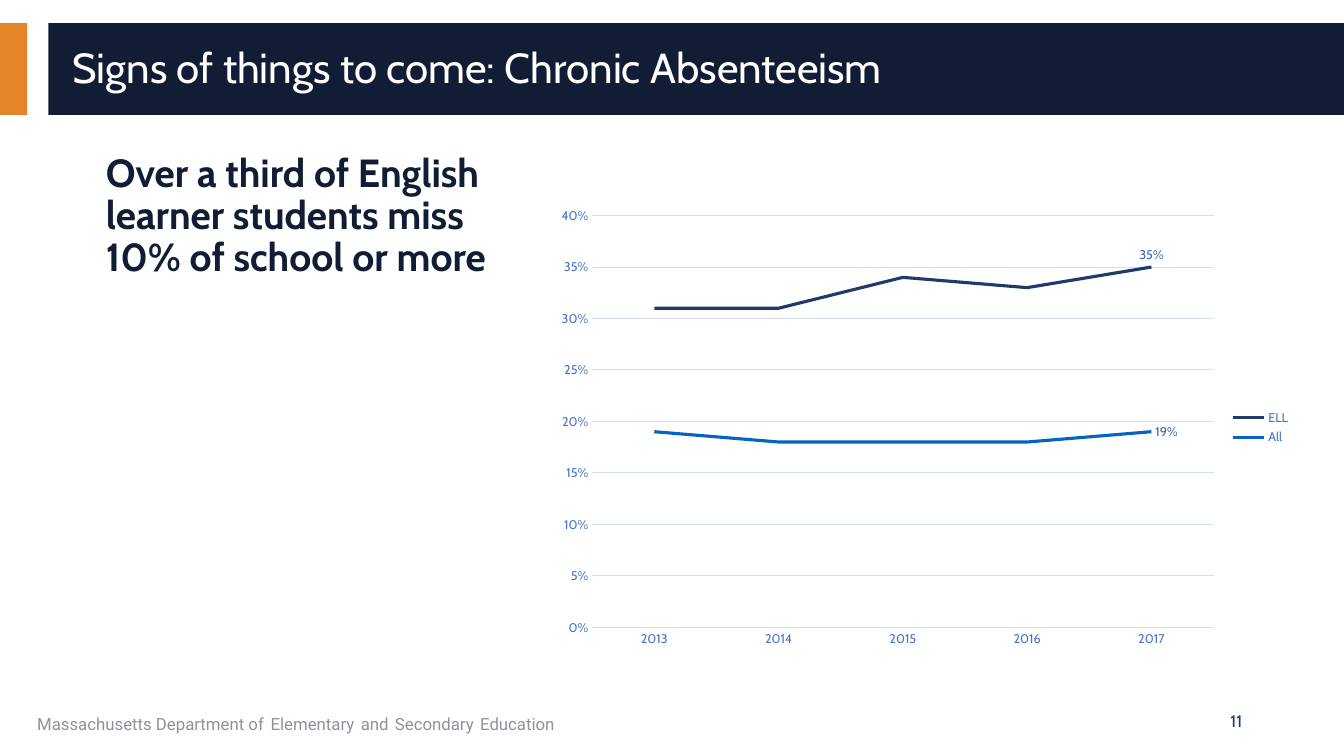
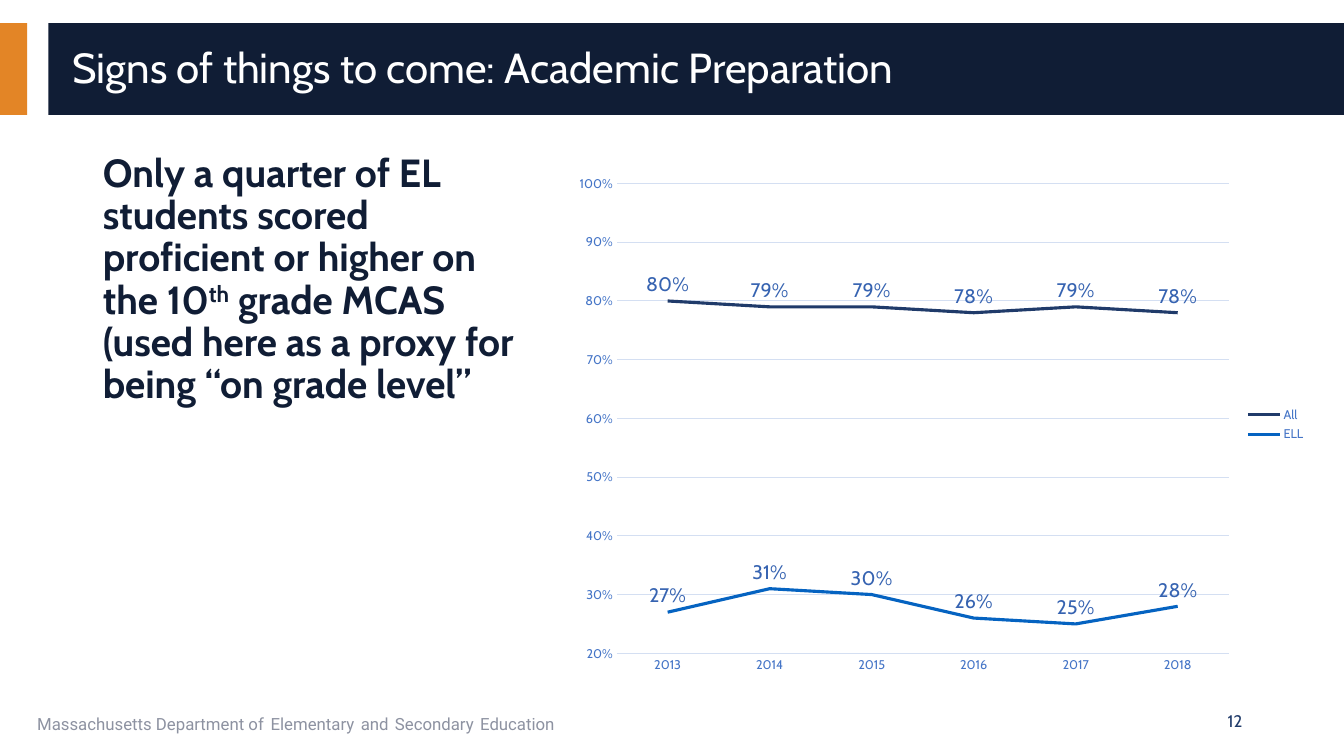
from lxml.etree import SubElement
from pptx import Presentation
from pptx.chart.data import CategoryChartData
from pptx.dml.color import RGBColor
from pptx.enum.chart import XL_CHART_TYPE, XL_LABEL_POSITION, XL_LEGEND_POSITION, XL_TICK_MARK
from pptx.enum.shapes import MSO_SHAPE
from pptx.enum.text import MSO_ANCHOR, MSO_AUTO_SIZE, PP_ALIGN
from pptx.oxml.ns import qn
from pptx.util import Inches, Pt

COLORS = {
    "orange": "E38526", "ink": "101D35", "navy": "203B6A", "blue": "0563C1",
    "axis": "4575C7", "label": "3663B1", "grid": "D4DFF2",
    "footer": "8D92A1", "white": "FFFFFF",
}
FONT, FOOTER_FONT = "Cabin", "Roboto"
FOOTER_PARTS = ["Massachusetts Department of", "Elementary", "and", "Secondary", "Education"]
BAND_TOP, BAND_HEIGHT = 0.23, 0.91
ABOVE, RIGHT = XL_LABEL_POSITION.ABOVE, XL_LABEL_POSITION.RIGHT


def rgb(name):
    return RGBColor.from_string(COLORS[name])


def style(font, size, color, name=FONT, bold=False):
    font.size, font.name, font.bold = Pt(size), name, bold
    font.color.rgb = rgb(color)


def place(shape, box):
    shape.left, shape.top, shape.width, shape.height = map(Inches, box)


def add_band(slide, left, width, color):
    band = slide.shapes.add_shape(
        MSO_SHAPE.RECTANGLE, *map(Inches, (left, BAND_TOP, width, BAND_HEIGHT)))
    band.shadow.inherit = False
    band.fill.solid()
    band.fill.fore_color.rgb = rgb(color)
    band.line.fill.background()
    return band


def add_line_box(slide, box):
    text_box = slide.shapes.add_textbox(*map(Inches, box))
    text_box.text_frame.word_wrap = True
    text_box.text_frame.vertical_anchor = MSO_ANCHOR.MIDDLE
    return text_box


def add_footer(slide, box):
    footer = add_line_box(slide, box)
    paragraph = footer.text_frame.paragraphs[0]
    for index, part in enumerate(FOOTER_PARTS):
        if index:
            gap = paragraph.add_run()
            gap.text = " "
            style(gap.font, 18, "navy", FOOTER_FONT)
        words = paragraph.add_run()
        words.text = part
        style(words.font, 12, "footer", FOOTER_FONT)
    return footer


def set_up_layout(layout, slide):
    """Move the shared bands and footer from the slide to its layout."""
    for placeholder in list(layout.placeholders)[2:]:
        placeholder.element.getparent().remove(placeholder.element)
    place(layout.placeholders[0], (0.62, 0.39, 12.44, 0.6))
    shared_parts = [
        add_band(slide, 0, 0.27, "orange"),
        add_band(slide, 0.48, 12.86, "ink"),
        add_footer(slide, (0.27, 6.95, 8.44, 0.4)),
    ]
    tree = layout.shapes.element
    for position, part in enumerate(shared_parts, start=2):
        tree.insert(position, part.element)


def fill_title(slide, text):
    frame = slide.shapes.title.text_frame
    frame.text = text
    frame.auto_size = MSO_AUTO_SIZE.NONE
    frame.vertical_anchor = MSO_ANCHOR.MIDDLE
    paragraph = frame.paragraphs[0]
    paragraph.alignment = PP_ALIGN.LEFT
    paragraph.line_spacing = 0.9
    style(paragraph.runs[0].font, 30, "white")


def fill_message(slide, box, parts):
    """Write the message; every second part is superscript."""
    message = slide.placeholders[1]
    place(message, box)
    frame = message.text_frame
    frame.auto_size = MSO_AUTO_SIZE.NONE
    paragraph = frame.paragraphs[0]
    paragraph.line_spacing, paragraph.space_before = 0.9, Pt(0)
    properties = paragraph._p.get_or_add_pPr()
    properties.set("marL", "0")
    properties.set("indent", "0")
    SubElement(properties, qn("a:buNone"))
    for index, part in enumerate(parts):
        run = paragraph.add_run()
        run.text = part
        style(run.font, 28, "ink", bold=True)
        if index % 2:
            run._r.get_or_add_rPr().set("baseline", "30000")


def add_number(slide, box, number):
    paragraph = add_line_box(slide, box).text_frame.paragraphs[0]
    paragraph.text = str(number)
    paragraph.alignment = PP_ALIGN.RIGHT
    style(paragraph.runs[0].font, 12, "navy")


def style_axes(chart, low, high, step):
    for axis in (chart.category_axis, chart.value_axis):
        axis.major_tick_mark = axis.minor_tick_mark = XL_TICK_MARK.NONE
        style(axis.tick_labels.font, 9, "axis")
    years, shares = chart.category_axis, chart.value_axis
    shares.minimum_scale, shares.maximum_scale, shares.major_unit = low, high, step
    shares.tick_labels.number_format = "0%"
    shares.tick_labels.number_format_is_linked = False
    shares.format.line.fill.background()
    shares.has_major_gridlines = True
    for line in (years.format.line, shares.major_gridlines.format.line):
        line.color.rgb = rgb("grid")
        line.width = Pt(0.75)


def add_trend_chart(slide, box, first_year, rates, scale, last_labels=None):
    """Label the last points at the given positions, or else every point."""
    data = CategoryChartData(number_format="0%")
    count = len(next(iter(rates.values())))
    data.categories = [str(first_year + offset) for offset in range(count)]
    for group, values in rates.items():
        data.add_series(group, values)
    chart = slide.shapes.add_chart(XL_CHART_TYPE.LINE, *map(Inches, box), data).chart
    style(chart.font, 10, "navy")
    chart.has_title = False
    chart.has_legend = True
    chart.legend.position = XL_LEGEND_POSITION.RIGHT
    chart.legend.include_in_layout = False
    style(chart.legend.font, 9, "axis")
    style_axes(chart, *scale)

    plot = chart.plots[0]
    plot.vary_by_categories = False
    for index, (series, color) in enumerate(zip(plot.series, ("navy", "blue"))):
        series.smooth = False
        series.format.line.color.rgb = rgb(color)
        series.format.line.width = Pt(2.25)
        labels = series.data_labels
        labels.show_value = last_labels is None
        if last_labels:
            label = series.points[count - 1].data_label
            style(label.font, 9, "label")
            label.position = last_labels[index]
        else:
            style(labels.font, 14, "label")
            labels.position = ABOVE


def fill_slide(slide, number, title, message_box, message, chart_box, **chart):
    fill_title(slide, title)
    fill_message(slide, message_box, message)
    add_number(slide, (9.42, 6.95, 3, 0.4), number)
    add_trend_chart(slide, chart_box, **chart)


SLIDES = [
    dict(
        title="Signs of things to come: Chronic Absenteeism",
        message_box=(0.95, 1.47, 4.3, 2.12),
        message=["Over a third of English learner students miss 10% of school or more"],
        chart_box=(5.42, 1.97, 7.48, 4.54),
        first_year=2013,
        rates={"ELL": (0.31, 0.31, 0.34, 0.33, 0.35),
               "All": (0.19, 0.18, 0.18, 0.18, 0.19)},
        scale=(0, 0.4, 0.05),
        last_labels=(ABOVE, RIGHT),
    ),
    dict(
        title="Signs of things to come: Academic Preparation",
        message_box=(0.92, 1.47, 4.3, 3.82),
        message=["Only a quarter of EL students scored proficient or higher on the 10",
                 "th", " grade MCAS (used here as a proxy for being “on grade level”"],
        chart_box=(5.6, 1.64, 7.45, 5.14),
        first_year=2013,
        rates={"All": (0.8, 0.79, 0.79, 0.78, 0.79, 0.78),
               "ELL": (0.27, 0.31, 0.3, 0.26, 0.25, 0.28)},
        scale=(0.2, 1, 0.1),
    ),
]


def main():
    prs = Presentation()
    prs.slide_width, prs.slide_height = Inches(13.33), Inches(7.5)
    layout = prs.slide_layouts[1]
    for number, content in enumerate(SLIDES, start=11):
        slide = prs.slides.add_slide(layout)
        if number == 11:
            set_up_layout(layout, slide)
        fill_slide(slide, number, **content)
    prs.save("out.pptx")


if __name__ == "__main__":
    main()
